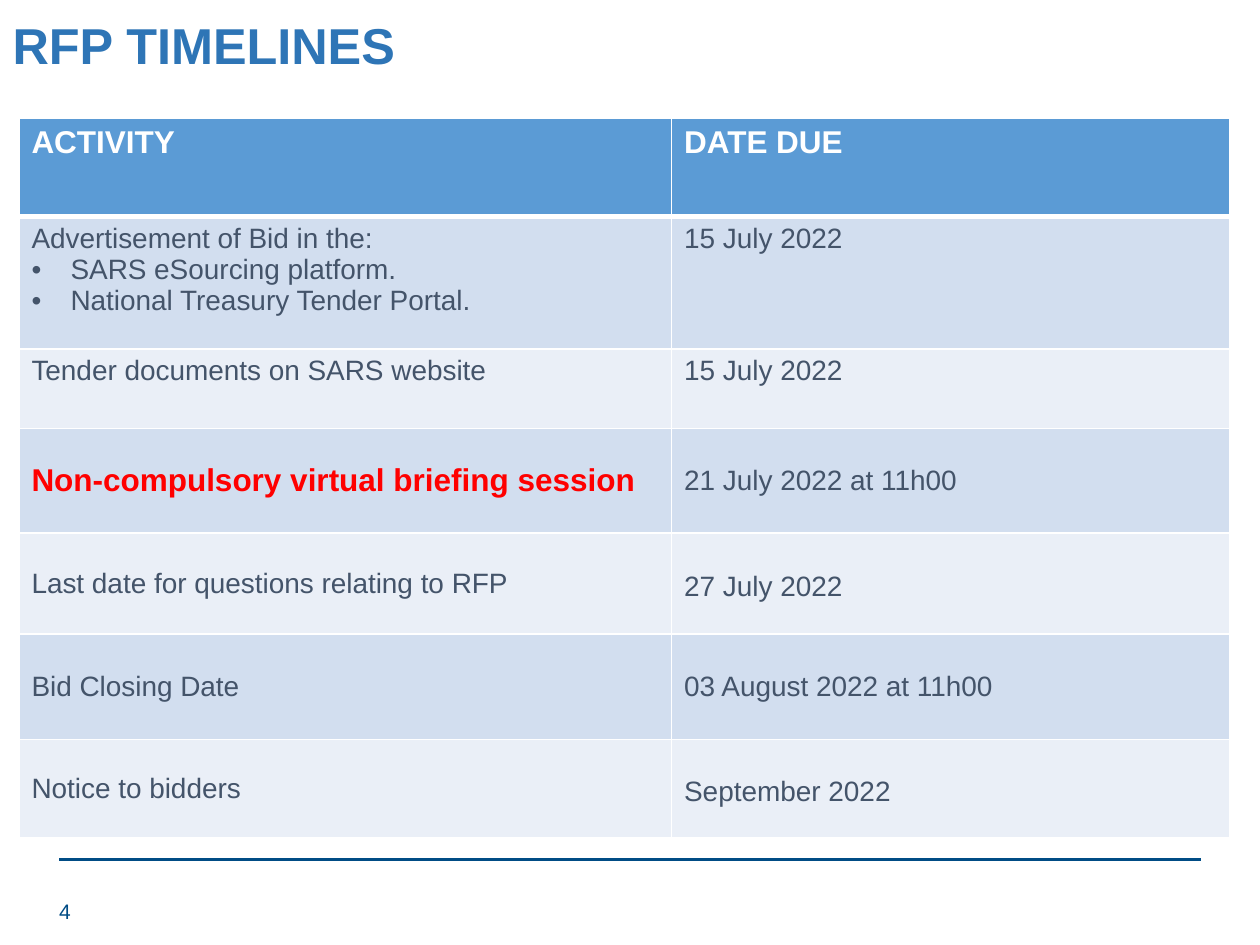
from lxml.etree import SubElement
from pptx import Presentation
from pptx.dml.color import RGBColor
from pptx.enum.shapes import MSO_CONNECTOR as CONN
from pptx.enum.text import MSO_ANCHOR as ANCHOR, PP_ALIGN as ALIGN
from pptx.oxml import parse_xml
from pptx.oxml.ns import nsdecls, qn
from pptx.util import Inches, Pt

COLORS = {
    "title": "2E75B6", "navy": "004C85", "header": "5B9BD5",
    "band_dark": "D2DEEF", "band_light": "EAEFF7",
    "text": "44546A", "alert": "FF0000", "white": "FFFFFF",
}
COL_WIDTHS = [5.18, 4.43]
TOP, MID = ANCHOR.TOP, ANCHOR.MIDDLE

# Height, activity lines, date, anchor, top margin of the date
ROWS = [
    (0.78, ["ACTIVITY"], "DATE DUE", TOP, 0.05),
    (1.05, ["Advertisement of Bid in the:", "• SARS eSourcing platform.",
            "• National Treasury Tender Portal."], "15 July 2022", TOP, 0.05),
    (0.63, ["Tender documents on SARS website"], "15 July 2022", TOP, 0.05),
    (0.83, ["Non-compulsory virtual briefing session"],
     "21 July 2022 at 11h00", MID, 0.05),
    (0.8, ["Last date for questions relating to RFP"], "27 July 2022", MID, 0.1),
    (0.84, ["Bid Closing Date"], "03 August 2022 at 11h00", MID, 0.05),
    (0.78, ["Notice to bidders"], "September 2022", MID, 0.1),
]
ALERT_ROW = 3


def rgb(name):
    return RGBColor.from_string(COLORS[name])


def add_run(p, text, size, color, bold=False):
    r = p.add_run()
    r.text = text
    r.font.name = "Arial"
    r.font.size = Pt(size)
    r.font.bold = bold
    r.font.color.rgb = rgb(color)


def set_bullet(p):
    pPr = p._p.get_or_add_pPr()
    pPr.set("marL", str(Inches(0.31)))
    pPr.set("indent", str(-Inches(0.31)))
    SubElement(pPr, qn("a:buFont")).set("typeface", "Arial")
    SubElement(pPr, qn("a:buChar")).set("char", "•")


def set_borders(cell, top, bottom):
    tcPr = cell._tc.get_or_add_tcPr()
    widths = {"lnL": 1, "lnR": 1, "lnT": top, "lnB": bottom}
    for i, (side, width) in enumerate(widths.items()):
        tcPr.insert(i, parse_xml(
            f'<a:{side} {nsdecls("a")} w="{Pt(width)}"><a:solidFill>'
            f'<a:srgbClr val="{COLORS["white"]}"/></a:solidFill></a:{side}>'))


def fill_cell(cell, lines, fill, size, color, bold):
    cell.fill.solid()
    cell.fill.fore_color.rgb = rgb(fill)
    tf = cell.text_frame
    for i, line in enumerate(lines):
        p = tf.add_paragraph() if i else tf.paragraphs[0]
        if line.startswith("•"):
            set_bullet(p)
        add_run(p, line.removeprefix("• "), size, color, bold)


def add_title(slide, text):
    sp = slide.shapes.title
    sp.left, sp.top = Inches(0), Inches(0.12)
    sp.width, sp.height = Inches(8.62), Inches(0.58)
    tf = sp.text_frame
    tf.vertical_anchor = TOP
    p = tf.paragraphs[0]
    p.alignment = ALIGN.LEFT
    p.line_spacing = 0.9
    add_run(p, text, 28.8, "title", True)


def add_timeline_table(slide):
    heights = [row[0] for row in ROWS]
    table = slide.shapes.add_table(
        len(ROWS), len(COL_WIDTHS), Inches(0.15), Inches(0.94),
        Inches(sum(COL_WIDTHS)), Inches(sum(heights))).table
    for col, width in zip(table.columns, COL_WIDTHS):
        col.width = Inches(width)
    for i, (height, activity, date, anchor, date_top) in enumerate(ROWS):
        table.rows[i].height = Inches(height)
        fill = "band_dark" if i % 2 else "band_light"
        style = (fill, 16, "text", False)
        if i == 0:
            style = ("header", 18, "white", True)
        alert = (fill, 18, "alert", True)
        left, right = table.cell(i, 0), table.cell(i, 1)
        fill_cell(left, activity, *(alert if i == ALERT_ROW else style))
        fill_cell(right, [date], *style)
        right.margin_top = Inches(date_top)
        for cell in (left, right):
            cell.vertical_anchor = anchor
            set_borders(cell, 3 if i == 1 else 1, 3 if i == 0 else 1)


def add_footer(slide, number):
    # Rule above the page number
    line = slide.shapes.add_connector(
        CONN.STRAIGHT, Inches(0.47), Inches(6.82), Inches(9.53), Inches(6.82))
    line.line.color.rgb = rgb("navy")
    line.line.width = Pt(2)
    SubElement(line._element.spPr, qn("a:effectLst"))
    # Page number
    sp = slide.shapes.add_textbox(
        Inches(0.37), Inches(7.03), Inches(2.25), Inches(0.4))
    tf = sp.text_frame
    tf.word_wrap = True
    tf.vertical_anchor = MID
    add_run(tf.paragraphs[0], number, 12, "navy")


def main():
    prs = Presentation()
    prs.slide_width, prs.slide_height = Inches(10), Inches(7.5)
    slide = prs.slides.add_slide(prs.slide_layouts[5])
    add_footer(slide, "4")
    add_title(slide, "RFP TIMELINES")
    add_timeline_table(slide)
    prs.save("out.pptx")


if __name__ == "__main__":
    main()
